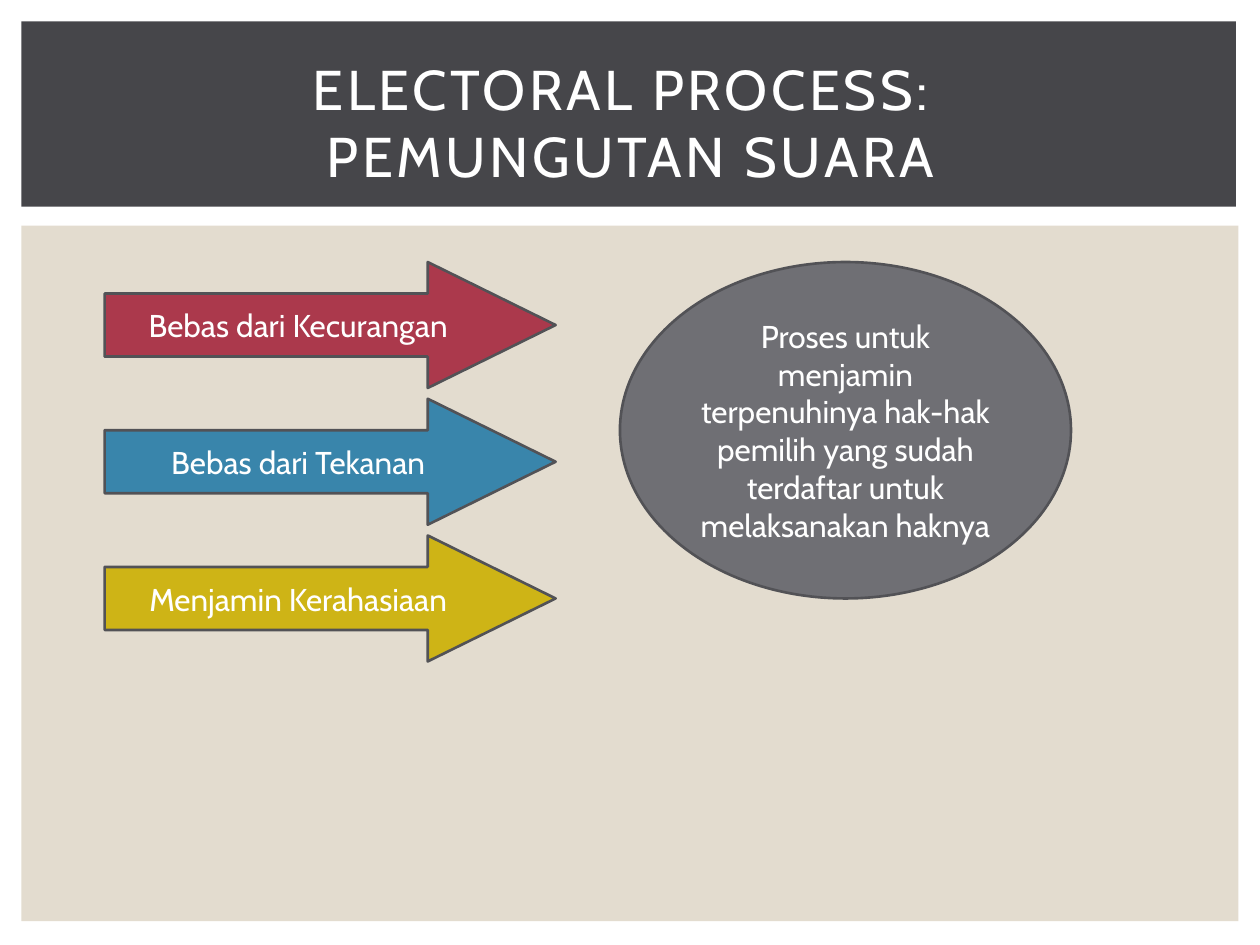
"""Build the slide on the voting stage of the electoral process."""
from pptx import Presentation
from pptx.dml.color import RGBColor
from pptx.enum.shapes import MSO_SHAPE as Shape
from pptx.enum.text import MSO_ANCHOR as Anchor, MSO_AUTO_SIZE as AutoSize, PP_ALIGN as Align
from pptx.util import Inches, Pt

WHITE = RGBColor(0xFF, 0xFF, 0xFF)
SAND = RGBColor(0xE3, 0xDC, 0xCF)
CHARCOAL = RGBColor(0x46, 0x46, 0x4A)
GRAY = RGBColor(0x6F, 0x6F, 0x74)
OUTLINE = RGBColor(0x52, 0x52, 0x56)
RED = RGBColor(0xAB, 0x39, 0x4C)
BLUE = RGBColor(0x39, 0x85, 0xAB)
YELLOW = RGBColor(0xCE, 0xB4, 0x16)


def write(frame, text, size):
    frame.text = text
    frame.word_wrap = True
    frame.vertical_anchor = Anchor.MIDDLE
    paragraph = frame.paragraphs[0]
    paragraph.alignment = Align.CENTER
    paragraph.font.name = "Cabin"
    paragraph.font.size = Pt(size)
    paragraph.font.color.rgb = WHITE


def add_filled(kind, left, top, width, height, color):
    shape = slide.shapes.add_shape(
        kind, Inches(left), Inches(top), Inches(width), Inches(height))
    shape.shadow.inherit = False
    shape.fill.solid()
    shape.fill.fore_color.rgb = color
    shape.line.color.rgb = OUTLINE
    shape.line.width = Pt(1.5)
    return shape


prs = Presentation()
prs.slide_width, prs.slide_height = Inches(10), Inches(7.5)
slide = prs.slides.add_slide(prs.slide_layouts[5])

title = slide.shapes.title
title.left, title.top = Inches(0.42), Inches(0.39)
title.width, title.height = Inches(9.17), Inches(1.15)
write(title.text_frame, "ELECTORAL PROCESS: \vPEMUNGUTAN SUARA", 32)
title.text_frame.auto_size = AutoSize.NONE
for run in title.text_frame.paragraphs[0].runs:
    run.font._element.set("spc", "200")

for top, width, height, color in ((1.79, 9.66, 5.52, SAND), (0.17, 9.64, 1.47, CHARCOAL)):
    panel = add_filled(Shape.RECTANGLE, 0.17, top, width, height, color)
    panel.line.fill.background()
    title.element.addprevious(panel.element)

purpose = add_filled(Shape.OVAL, 4.92, 2.08, 3.58, 2.67, GRAY)
write(purpose.text_frame,
      "Proses untuk menjamin terpenuhinya hak-hak pemilih yang sudah terdaftar "
      "untuk melaksanakan haknya", 18)

principles = (
    ("Bebas dari Kecurangan", RED),
    ("Bebas dari Tekanan", BLUE),
    ("Menjamin Kerahasiaan", YELLOW),
)
for row, (principle, color) in enumerate(principles):
    arrow = add_filled(Shape.RIGHT_ARROW, 0.83, 2.08 + row * 1.085, 3.58, 1, color)
    arrow.adjustments[1] = 1.015
    write(arrow.text_frame, principle, 18)

prs.save("out.pptx")
